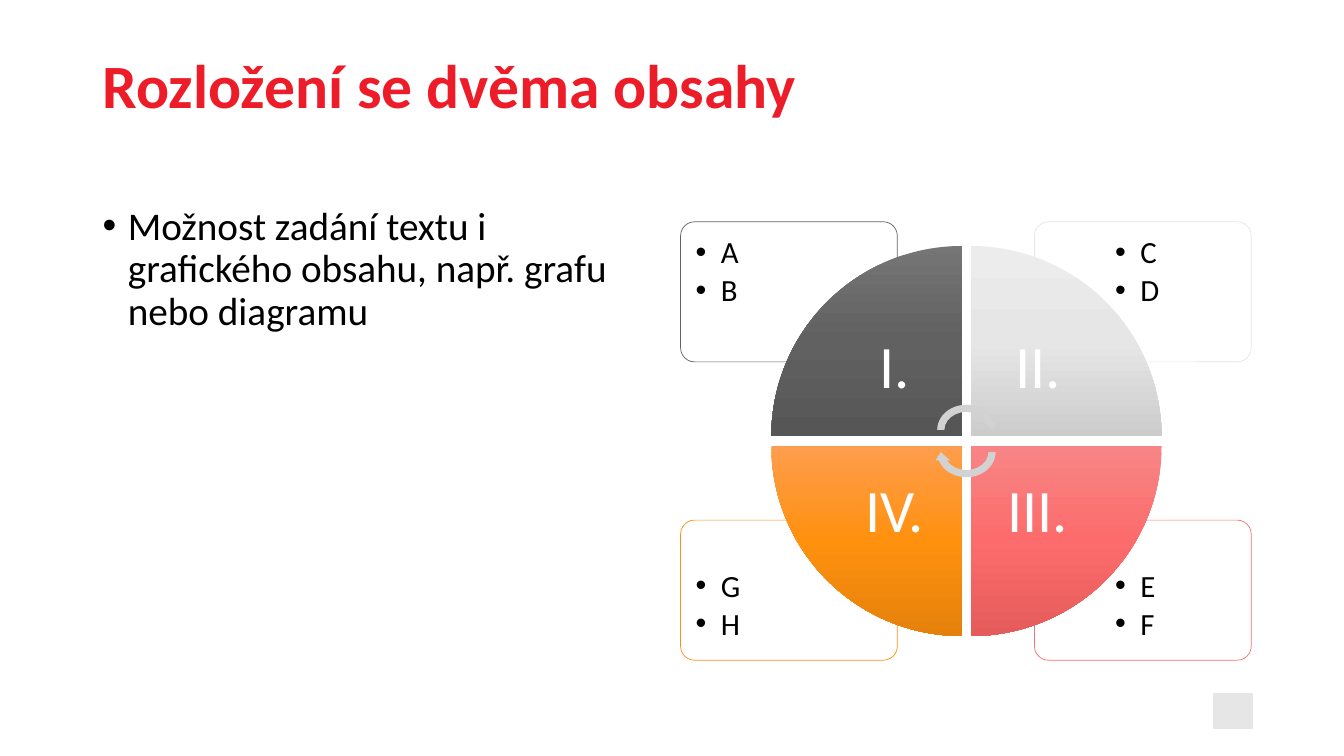
"""Build a slide with a text column and a four-part cycle diagram."""
from lxml.etree import SubElement
from pptx import Presentation
from pptx.dml.color import RGBColor
from pptx.enum.shapes import MSO_SHAPE
from pptx.enum.text import MSO_ANCHOR, PP_ALIGN
from pptx.oxml.ns import qn
from pptx.util import Inches, Pt

RED = RGBColor(0xED, 0x1C, 0x29)
BLACK = RGBColor(0, 0, 0)
WHITE = RGBColor(255, 255, 255)
PALE = RGBColor(0xE6, 0xE6, 0xE6)
SILVER = RGBColor(0xD2, 0xD2, 0xD2)
GREY = RGBColor(0x61, 0x61, 0x61)
CORAL = RGBColor(0xF5, 0x73, 0x73)
AMBER = RGBColor(0xFA, 0x91, 0x14)
DARKS = [RGBColor(0x75, 0x75, 0x75), GREY, RGBColor(0x56, 0x56, 0x56)]
LIGHTS = [RGBColor(0xEC, 0xEC, 0xEC), PALE, RGBColor(0xCC, 0xCC, 0xCC)]
CORALS = [RGBColor(0xF8, 0x85, 0x85), RGBColor(0xFC, 0x6C, 0x6C), RGBColor(0xE5, 0x5B, 0x5B)]
AMBERS = [RGBColor(0xFE, 0x9D, 0x4D), RGBColor(0xFF, 0x91, 0x0F), RGBColor(0xE5, 0x81, 0x0B)]

deck = Presentation()
deck.slide_width, deck.slide_height = Inches(13.33), Inches(7.5)
slide = deck.slides.add_slide(deck.slide_layouts[6])


def draw(kind, area, fill=None, line=None, width=1):
    shape = slide.shapes.add_shape(kind, *map(Inches, area))
    shape.shadow.inherit = False
    if fill is not None:
        shape.fill.solid()
        shape.fill.fore_color.rgb = fill
    if line is None:
        shape.line.fill.background()
    else:
        shape.line.color.rgb = line
        shape.line.width = Pt(width)
    return shape


def write(area, lines, font, layout=None, inset=None, bullet=False, after=0):
    frame = slide.shapes.add_textbox(*map(Inches, area)).text_frame
    frame.word_wrap = True
    if inset:
        for side in ("left", "top", "right", "bottom"):
            setattr(frame, f"margin_{side}", Inches(inset))
    for name, value in (layout or {}).items():
        setattr(frame, name, value)
    frame.text = "\n".join(lines)
    for para in frame.paragraphs:
        para.line_spacing = 0.9
        para.space_after = Pt(after)
        if bullet:
            props = para._p.get_or_add_pPr()
            props.set("marL", str(Inches(0.25)))
            props.set("indent", str(Inches(-0.25)))
            SubElement(props, qn("a:buFont"), typeface="Arial")
            SubElement(props, qn("a:buChar"), char="•")
        else:
            para.alignment = PP_ALIGN.CENTER if inset else PP_ALIGN.LEFT
        face = para.runs[0].font
        face.color.rgb = font["color"]
        for name in ("size", "bold"):
            setattr(face, name, font.get(name))
        face.name = "Calibri"


middle = {"vertical_anchor": MSO_ANCHOR.MIDDLE}
draw(MSO_SHAPE.RECTANGLE, (12.04, 6.88, 0.38, 0.35), PALE, PALE)
write((0.92, 0.37, 11.5, 1.01), ["Rozložení se dvěma obsahy"],
      {"size": Pt(44), "bold": True, "color": RED}, middle)
write((0.92, 2, 5.67, 4.76),
      ["Možnost zadání textu i grafického obsahu, např. grafu nebo diagramu"],
      {"size": Pt(28), "color": BLACK}, bullet=True)

parts = [
    ("I.", ["A", "B"], 0, 0, GREY, DARKS),
    ("II.", ["C", "D"], 1, 0, PALE, LIGHTS),
    ("III.", ["E", "F"], 1, 1, CORAL, CORALS),
    ("IV.", ["G", "H"], 0, 1, AMBER, AMBERS),
]

for label, items, col, row, edge, shades in parts:
    card = draw(MSO_SHAPE.ROUNDED_RECTANGLE,
                (6.75 + 3.51 * col, 2.2 + 2.96 * row, 2.15, 1.39), WHITE, edge, 0.5)
    card.adjustments[0] = 0.1
    tint = card._element.spPr.find(qn("a:solidFill"))[0]
    SubElement(tint, qn("a:alpha"), val="90000")
    write((6.78 + 4.16 * col, 2.23 + 3.31 * row, 1.45, 0.98), items,
          {"size": Pt(22), "color": BLACK}, inset=0.12, bullet=True, after=3.3)

for turn, (label, items, col, row, edge, shades) in enumerate(parts):
    wedge = draw(MSO_SHAPE.PIE_WEDGE, (7.65 + 1.98 * col, 2.44 + 1.98 * row, 1.89, 1.89))
    wedge.rotation = 90 * turn
    wedge.fill.gradient()
    grad = wedge._element.spPr.find(qn("a:gradFill"))
    grad.set("rotWithShape", "0")
    stops = grad.find(qn("a:gsLst"))
    for stop in list(stops):
        stops.remove(stop)
    for spot, shade in enumerate(shades):
        stop = SubElement(stops, qn("a:gs"), pos=str(50000 * spot))
        SubElement(stop, qn("a:srgbClr"), val=str(shade))
    grad.find(qn("a:lin")).set("ang", "5400000")
    write((8.21 + 1.42 * col, 3 + 1.42 * row, 1.33, 1.33), [label],
          {"size": Pt(43), "color": WHITE}, middle, inset=0.33)

for top, angle in ((3.98, 0), (4.2, 180)):
    arrow = draw(MSO_SHAPE.CIRCULAR_ARROW, (9.26, top, 0.65, 0.57), SILVER)
    arrow.rotation = angle

deck.save("out.pptx")
